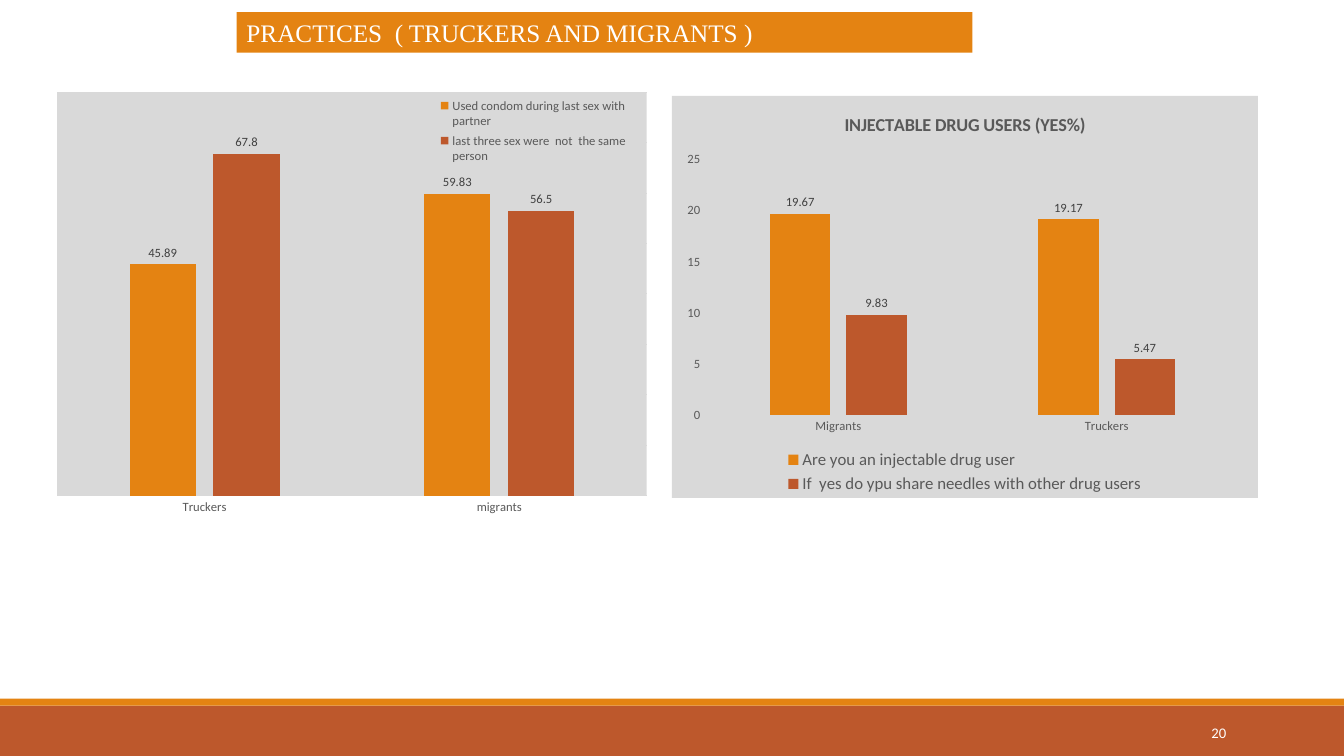
from pptx import Presentation
from pptx.chart.data import CategoryChartData
from pptx.dml.color import RGBColor
from pptx.enum.chart import XL_CHART_TYPE, XL_LABEL_POSITION, XL_LEGEND_POSITION, XL_TICK_MARK
from pptx.enum.text import MSO_ANCHOR, PP_ALIGN
from pptx.oxml import parse_xml
from pptx.oxml.ns import nsdecls
from pptx.util import Pt

ORANGE, RUST, GREY, DARK, TEXT, WHITE = "E48312", "BD582C", "D9D9D9", "404040", "595959", "FFFFFF"


def paint(color, value):
    """Set a colour from a hex string."""
    color.rgb = RGBColor.from_string(value)


def style(font, size, color, name="Calibri", bold=False):
    """Set the size, colour, face and weight of a font."""
    font.size, font.name, font.bold = Pt(size), name, bold
    paint(font.color, color)


def add_bar(slide, box, color):
    """Add a plain filled rectangle."""
    bar = slide.shapes.add_shape(1, *map(Pt, box))
    bar.shadow.inherit = False
    bar.fill.solid()
    paint(bar.fill.fore_color, color)
    bar.line.fill.background()
    return bar


def write(shape, text, size, name, align):
    """Put one line of white text in a shape."""
    frame = shape.text_frame
    frame.word_wrap = True
    frame.vertical_anchor = MSO_ANCHOR.MIDDLE
    frame.text = text
    line = frame.paragraphs[0]
    line.alignment = align
    style(line.runs[0].font, size, WHITE, name)


def make_layout(box, inner=False):
    """Build a manual layout from fractions of the chart."""
    target = '<c:layoutTarget val="inner"/>' if inner else ""
    modes = "".join(f'<c:{key}Mode val="edge"/>' for key in "xy")
    sizes = "".join(f'<c:{key} val="{val}"/>' for key, val in zip("xywh", box))
    return parse_xml(f'<c:layout {nsdecls("c")}><c:manualLayout>{target}{modes}{sizes}'
                     "</c:manualLayout></c:layout>")


def make_fill(color):
    """Build shape properties with a solid fill and no line."""
    return parse_xml(f'<c:spPr {nsdecls("c", "a")}><a:solidFill><a:srgbClr val="{color}"/></a:solidFill>'
                     "<a:ln><a:noFill/></a:ln></c:spPr>")


def add_legend(chart, place, size, box):
    """Add a legend at a fixed place."""
    chart.has_legend = True
    chart.legend.position = place
    chart.legend.include_in_layout = False
    style(chart.legend.font, size, TEXT)
    root = chart.element.xpath("c:chart/c:legend")[0]
    for old in root.xpath("c:layout"):
        root.remove(old)
    root.xpath("c:legendPos")[0].addnext(make_layout(box))


def set_axes(chart, top):
    """Style both axes and the grid."""
    cats, vals = chart.category_axis, chart.value_axis
    for axis in (cats, vals):
        axis.major_tick_mark = axis.minor_tick_mark = XL_TICK_MARK.NONE
        style(axis.tick_labels.font, 9, TEXT)
    vals.minimum_scale, vals.maximum_scale = 0, top
    vals.format.line.fill.background()
    for line in (cats.format.line, vals.major_gridlines.format.line):
        line.width = Pt(0.75)
        paint(line.color, GREY)


def add_columns(slide, box, cats, rows, top, plot):
    """Add a clustered column chart with value labels."""
    data = CategoryChartData()
    data.categories = cats
    for name, vals in rows:
        data.add_series(name, vals)
    chart = slide.shapes.add_chart(XL_CHART_TYPE.COLUMN_CLUSTERED, *map(Pt, box), data).chart
    style(chart.font, 10, "000000")
    chart.has_title = False
    bars = chart.plots[0]
    bars.gap_width, bars.overlap, bars.vary_by_categories = 219, -27, False
    for row, color in zip(bars.series, (ORANGE, RUST)):
        row.format.fill.solid()
        paint(row.format.fill.fore_color, color)
        tags = row.data_labels
        tags.show_value = True
        tags.position = XL_LABEL_POSITION.OUTSIDE_END
        style(tags.font, 9, DARK)
    set_axes(chart, top)
    area = chart.element.xpath("c:chart/c:plotArea")[0]
    for old in area.xpath("c:layout"):
        area.remove(old)
    area.insert(0, make_layout(plot, True))
    return chart


def add_drugs(slide):
    """Add the chart of injectable drug users."""
    rows = [("Are you an injectable drug user", (19.67, 19.17)),
            ("If  yes do ypu share needles with other drug users", (9.83, 5.47))]
    chart = add_columns(slide, (480, 68.4, 418.5, 287.3), ("Migrants", "Truckers"), rows, 25,
                        (0.055, 0.159, 0.916, 0.635))
    chart.value_axis.major_unit = 5
    chart.has_title = True
    title = chart.chart_title
    title.include_in_layout = False
    title.text_frame.text = "INJECTABLE DRUG USERS (YES%)"
    style(title.text_frame.paragraphs[0].runs[0].font, 13, TEXT, bold=True)
    add_legend(chart, XL_LEGEND_POSITION.BOTTOM, 12, (0.18, 0.87, 0.64, 0.13))
    chart.element.xpath("c:chart")[0].addnext(make_fill(GREY))


def add_condoms(slide):
    """Add the chart of condom use and partners."""
    rows = [("Used condom during last sex with partner", (45.89, 59.83)),
            ("last three sex were  not  the same  person", (67.8, 56.5))]
    chart = add_columns(slide, (17.3, 60.5, 445, 334.8), ("Truckers", "migrants"), rows, 80,
                        (0.053, 0.016, 0.947, 0.861))
    chart.value_axis.visible = False
    add_legend(chart, XL_LEGEND_POSITION.CORNER, 9, (0.66, 0.02, 0.32, 0.16))
    chart.element.xpath("c:chart/c:plotArea")[0].append(make_fill(GREY))


def main():
    """Build and save the slide."""
    deck = Presentation()
    deck.slide_width, deck.slide_height = Pt(960), Pt(540)
    slide = deck.slides.add_slide(deck.slide_layouts[6])
    add_bar(slide, (0, 504, 960, 36), RUST)
    add_bar(slide, (0, 499, 960, 5), ORANGE)
    page = slide.shapes.add_textbox(*map(Pt, (780, 508.5, 103, 29)))
    write(page, "20", 10.5, "Calibri", PP_ALIGN.RIGHT)
    head = add_bar(slide, (169, 8.6, 525.6, 29), ORANGE)
    write(head, "PRACTICES  ( TRUCKERS AND MIGRANTS )", 18, "Times New Roman", PP_ALIGN.LEFT)
    add_drugs(slide)
    add_condoms(slide)
    deck.save("out.pptx")


if __name__ == "__main__":
    main()
